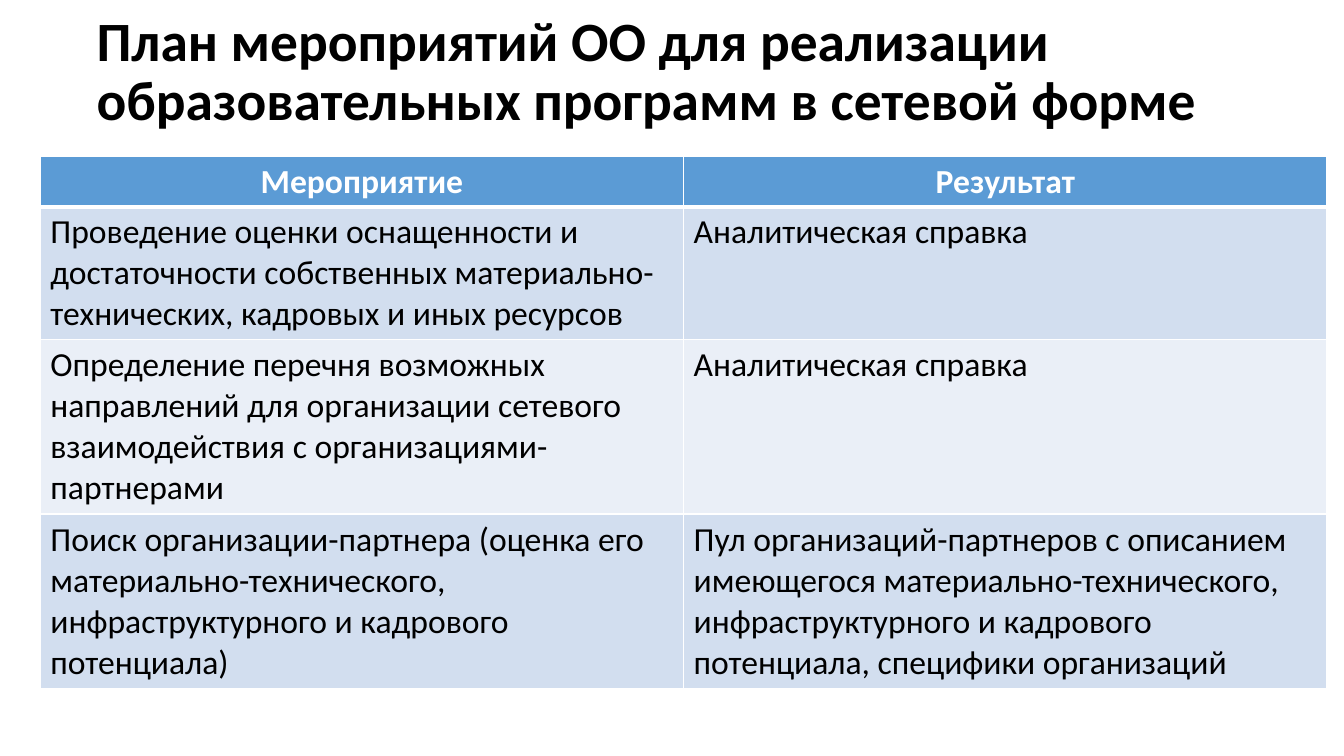
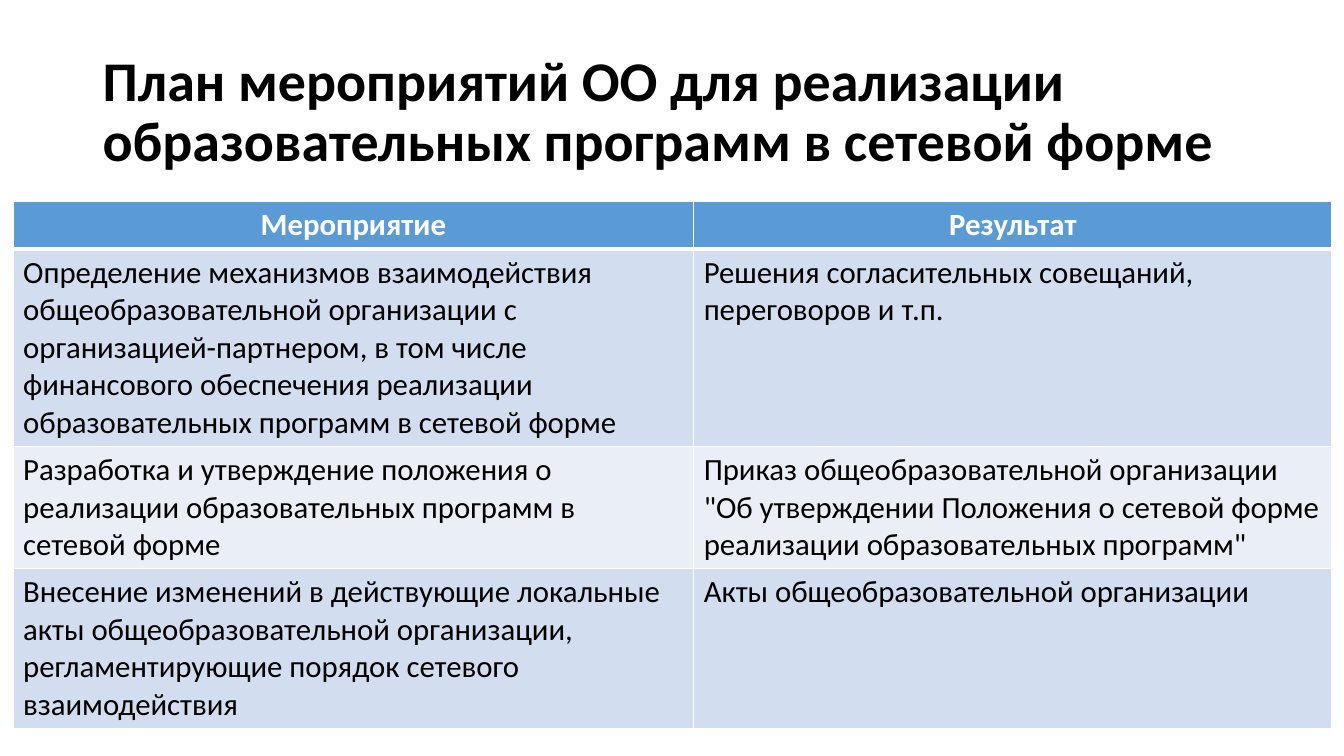
import pptx
import pptx.util
import pptx.dml.color
import pptx.enum.text
import pptx.oxml
import pptx.oxml.ns

# Shared look
PX = 9144  # 100 px to the inch
FONT = "Calibri"
BLACK, WHITE = "000000", "FFFFFF"
HEAD, BANDS = "5B9BD5", ("D2DEEF", "EAEFF7")
THIN, THICK = 1, 3
TITLE = "План мероприятий ОО для реализации образовательных программ в сетевой форме"
HEADS = ("Мероприятие", "Результат")

# Content of each slide
PLANS = [
    {
        "title": (86, 0, 1150, 145), "title_size": 39.6,
        "place": (40, 155), "cols": (638, 638), "size": 24,
        "heights": (50, 132, 173, 173),
        "rows": [
            ("Проведение оценки оснащенности и достаточности собственных "
             "материально-технических, кадровых и иных ресурсов",
             "Аналитическая справка"),
            ("Определение перечня возможных направлений для организации "
             "сетевого взаимодействия с организациями-партнерами",
             "Аналитическая справка"),
            ("Поиск организации-партнера (оценка его материально-технического, "
             "инфраструктурного и кадрового потенциала)",
             "Пул организаций-партнеров с описанием имеющегося "
             "материально-технического, инфраструктурного и кадрового "
             "потенциала, специфики организаций"),
        ],
    },
    {
        "title": (92, 40, 1150, 145), "title_size": 40,
        "place": (13, 200), "cols": (675, 633), "size": 22,
        "heights": (47, 196, 121, 159),
        "rows": [
            ("Определение механизмов взаимодействия общеобразовательной "
             "организации с организацией-партнером, в том числе финансового "
             "обеспечения реализации образовательных программ в сетевой форме",
             "Решения согласительных совещаний, переговоров и т.п."),
            ("Разработка и утверждение положения о реализации "
             "образовательных программ в сетевой форме",
             'Приказ общеобразовательной организации "Об утверждении Положения '
             'о сетевой форме реализации образовательных программ"'),
            ("Внесение изменений в действующие локальные акты "
             "общеобразовательной организации, регламентирующие порядок "
             "сетевого взаимодействия",
             "Акты общеобразовательной организации"),
        ],
    },
]


def px(n):
    return pptx.util.Emu(n * PX)


def color(code):
    return pptx.dml.color.RGBColor.from_string(code)


def write(frame, text, size, ink=BLACK, bold=False, align="LEFT", spacing=None):
    frame.word_wrap = True
    para = frame.paragraphs[0]
    para.alignment = getattr(pptx.enum.text.PP_ALIGN, align)
    if spacing:
        para.line_spacing = spacing
    run = para.add_run()
    run.text = text
    run.font.name = FONT
    run.font.size = pptx.util.Pt(size)
    run.font.bold = bold
    run.font.color.rgb = color(ink)


def add_title(slide, box, size):
    frame = slide.shapes.add_textbox(*map(px, box)).text_frame
    frame.vertical_anchor = pptx.enum.text.MSO_ANCHOR.MIDDLE
    write(frame, TITLE, size, bold=True, spacing=0.9)


def edge(cell, top, bottom):
    """Draw white borders; they must come before the cell's fill."""
    props = cell._tc.get_or_add_tcPr()
    for side, width in (("L", THIN), ("R", THIN), ("T", top), ("B", bottom)):
        props.append(pptx.oxml.parse_xml(
            f'<a:ln{side} {pptx.oxml.ns.nsdecls("a")} w="{pptx.util.Pt(width)}">'
            f'<a:solidFill><a:srgbClr val="{WHITE}"/></a:solidFill></a:ln{side}>'))


def add_plan(slide, place, cols, heights, rows, size):
    grid = [HEADS, *rows]
    table = slide.shapes.add_table(
        len(grid), len(cols), *map(px, (*place, sum(cols), sum(heights)))).table
    table.horz_banding = False
    for col, width in zip(table.columns, cols):
        col.width = px(width)
    for r, (texts, height) in enumerate(zip(grid, heights)):
        table.rows[r].height = px(height)
        head = r == 0
        for c, text in enumerate(texts):
            cell = table.cell(r, c)
            edge(cell, THICK if r == 1 else THIN, THICK if head else THIN)
            cell.fill.solid()
            cell.fill.fore_color.rgb = color(HEAD if head else BANDS[(r - 1) % 2])
            write(cell.text_frame, text, size, ink=WHITE if head else BLACK,
                  bold=head, align="CENTER" if head else "LEFT")


def main():
    deck = pptx.Presentation()
    deck.slide_width, deck.slide_height = px(1333), px(750)
    for plan in PLANS:
        slide = deck.slides.add_slide(deck.slide_layouts[6])
        add_title(slide, plan["title"], plan["title_size"])
        add_plan(slide, plan["place"], plan["cols"], plan["heights"],
                 plan["rows"], plan["size"])
    deck.save("out.pptx")


if __name__ == "__main__":
    main()
